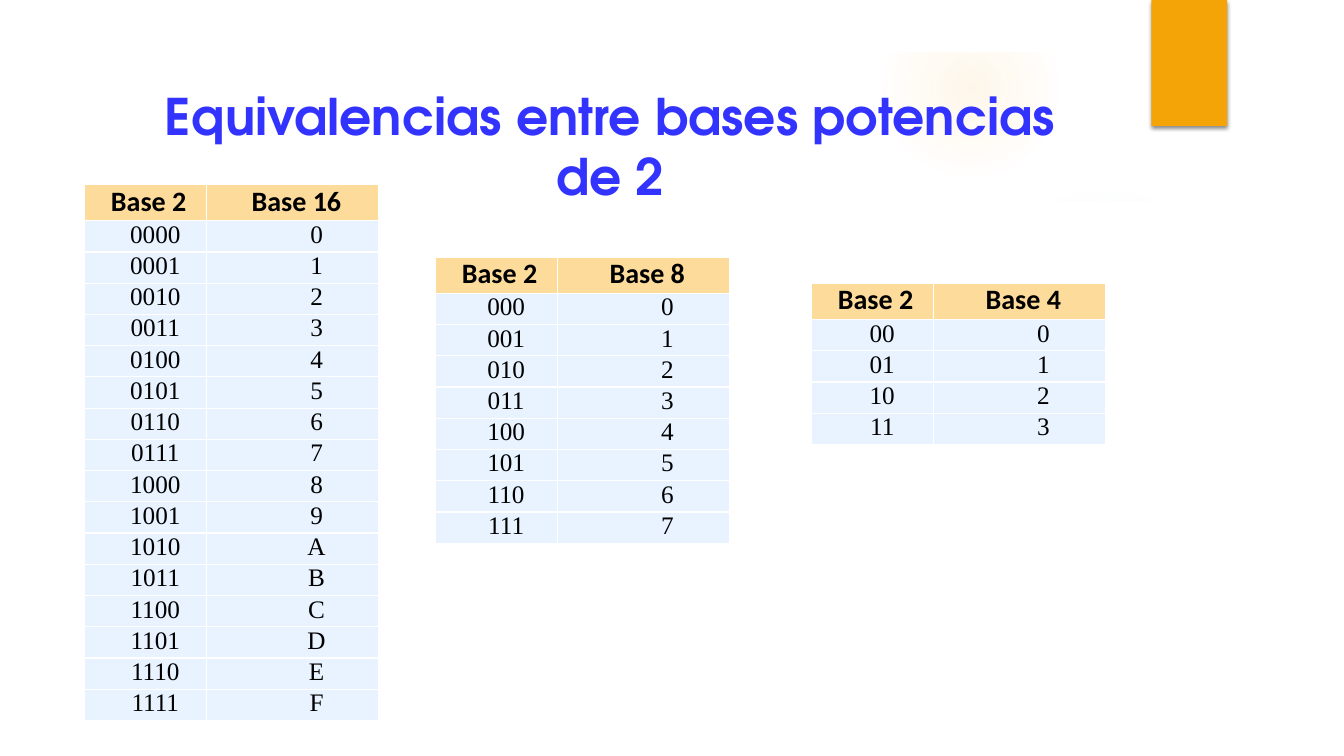
"""Build the slide of equivalences between number bases that are powers of 2."""
from lxml.etree import SubElement
from pptx import Presentation
from pptx.dml.color import RGBColor
from pptx.enum.shapes import MSO_SHAPE as Shape
from pptx.enum.text import MSO_ANCHOR as Anchor, MSO_AUTO_SIZE as AutoSize, PP_ALIGN as Align
from pptx.oxml import parse_xml
from pptx.oxml.ns import nsdecls, qn
from pptx.util import Inches, Pt

TITLE = "Equivalencias entre bases potencias de 2"
DIGITS = "0123456789ABCDEF"
TABLES = [
    {"base": 16, "bits": 4, "left": 0.84, "top": 1.83},
    {"base": 8, "bits": 3, "left": 4.32, "top": 2.55},
    {"base": 4, "bits": 2, "left": 8.05, "top": 2.81},
]
COLUMNS = (1.21, 1.71)
HEADER_HEIGHT, ROW_HEIGHT = 0.36, 0.31
HEADER_INDENTS, BODY_INDENTS = (0.06, 0.07), (0.19, 0.47)
COLORS = {
    "white": "FFFFFF", "black": "000000", "title": "3333FF", "tab": "F5A408",
    "header": "FCDB9B", "body": "E8F3FF", "blue glow": "8EBBD2", "amber glow": "FAC96A",
}
FONTS = {
    "title": {"name": "TeX Gyre Adventor", "size": Pt(36), "bold": True},
    "header": {"name": "Calibri", "size": Pt(20), "bold": True},
    "body": {"name": "Times New Roman", "size": Pt(18), "bold": False},
}
GLOWS = [
    ("blue glow", 9.41, 1.83, 3.08, ((0, 7), (36, 6), (69, 0))),
    ("amber glow", 8.75, 0, 1.75, ((0, 14), (36, 7), (73, 0))),
]
HORIZON = [
    (12.84, 2.04), (12, 2.17), (11.16, 2.27), (10.32, 2.35), (9.49, 2.41),
    (8.4, 2.46), (7.08, 2.48), (5.59, 2.46), (4.01, 2.38), (2.49, 2.27),
    (1.35, 2.15), (0.5, 2.04), (0.5, 7), (12.84, 7),
]


def rgb(name):
    return RGBColor.from_string(COLORS[name])


def paint(shape, color):
    shape.shadow.inherit = False
    shape.fill.solid()
    shape.fill.fore_color.rgb = rgb(color)
    shape.line.fill.background()


def add_block(slide, kind, color, *area):
    block = slide.shapes.add_shape(kind, *map(Inches, area))
    paint(block, color)
    return block


def add_glow(slide, color, left, top, size, stops):
    glow = add_block(slide, Shape.OVAL, color, left, top, size, size)
    marks = "".join(
        f'<a:gs pos="{place * 1000}"><a:srgbClr val="{COLORS[color]}">'
        f'<a:alpha val="{alpha * 1000}"/></a:srgbClr></a:gs>'
        for place, alpha in stops
    )
    gradient = parse_xml(
        f'<a:gradFill {nsdecls("a")} rotWithShape="1"><a:gsLst>{marks}</a:gsLst>'
        '<a:path path="circle"><a:fillToRect l="50000" t="50000" r="50000" b="50000"/>'
        "</a:path></a:gradFill>"
    )
    properties = glow.element.spPr
    properties.replace(properties.find(qn("a:solidFill")), gradient)


def add_background(slide):
    for glow in GLOWS:
        add_glow(slide, *glow)
    outline = slide.shapes.build_freeform(*HORIZON[0], scale=Inches(1))
    outline.add_line_segments(HORIZON[1:], close=True)
    paint(outline.convert_to_shape(), "white")
    add_block(slide, Shape.RECTANGLE, "white", 0, 0, 13.33, 0.52)
    tab = add_block(slide, Shape.RECTANGLE, "tab", 11.42, 0, 0.75, 1.25)
    effects = tab.element.spPr.find(qn("a:effectLst"))
    effects.append(parse_xml(
        f'<a:outerShdw {nsdecls("a")} blurRad="{Pt(3)}" dist="{Pt(2)}" dir="5400000" '
        f'rotWithShape="0"><a:srgbClr val="{COLORS["black"]}"><a:alpha val="45000"/>'
        "</a:srgbClr></a:outerShdw>"
    ))


def write(frame, text, style, color):
    para = frame.paragraphs[0]
    para.alignment = Align.CENTER
    span = para.add_run()
    span.text = text
    for key, value in FONTS[style].items():
        setattr(span.font, key, value)
    span.font.color.rgb = rgb(color)
    return para


def fill_cell(cell, text, style, indent):
    for side in ("left", "right", "top", "bottom"):
        setattr(cell, f"margin_{side}", 0)
    properties = cell._tc.get_or_add_tcPr()
    for edge in ("lnL", "lnR", "lnT", "lnB"):
        line = SubElement(properties, qn(f"a:{edge}"), w=str(Pt(1)))
        solid = SubElement(line, qn("a:solidFill"))
        SubElement(solid, qn("a:srgbClr"), val=COLORS["white"])
    cell.fill.solid()
    cell.fill.fore_color.rgb = rgb(style)
    para = write(cell.text_frame, text, style, "black")
    para._p.get_or_add_pPr().set("marL", str(Inches(indent)))


def add_equivalences(slide, base, bits, left, top):
    rows = [("Base 2", f"Base {base}")]
    rows += [(f"{number:0{bits}b}", DIGITS[number]) for number in range(base)]
    heights = [HEADER_HEIGHT] + [ROW_HEIGHT] * base
    area = (left, top, sum(COLUMNS), sum(heights))
    table = slide.shapes.add_table(len(rows), len(COLUMNS), *map(Inches, area)).table
    table.first_row = table.horz_banding = False
    for column, width in zip(table.columns, COLUMNS):
        column.width = Inches(width)
    for index, texts in enumerate(rows):
        table.rows[index].height = Inches(heights[index])
        style, indents = ("body", BODY_INDENTS) if index else ("header", HEADER_INDENTS)
        for cell, text, indent in zip(table.rows[index].cells, texts, indents):
            fill_cell(cell, text, style, indent)


def main():
    deck = Presentation()
    deck.slide_width, deck.slide_height = Inches(13.33), Inches(7.5)
    slide = deck.slides.add_slide(deck.slide_layouts[5])
    add_background(slide)
    title = slide.shapes.title
    slide.shapes._spTree.append(title.element)
    title.left, title.top, title.width, title.height = map(Inches, (1.26, 1.04, 9.58, 0.8))
    frame = title.text_frame
    frame.word_wrap = True
    frame.auto_size = AutoSize.NONE
    frame.vertical_anchor = Anchor.MIDDLE
    write(frame, TITLE, "title", "title")
    for table in TABLES:
        add_equivalences(slide, **table)
    deck.save("out.pptx")


if __name__ == "__main__":
    main()
